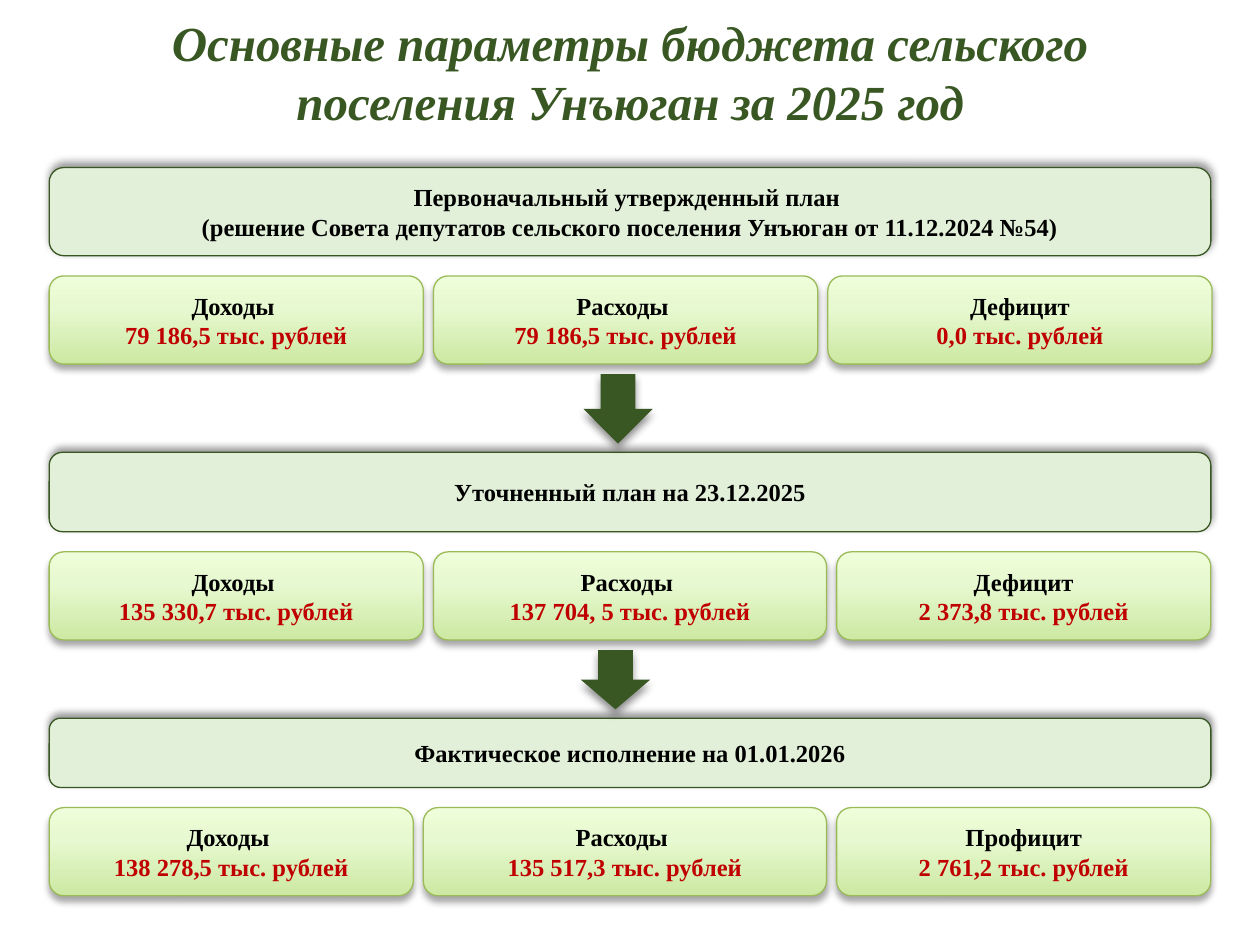
import lxml.etree
import pptx
import pptx.dml.color
import pptx.enum.shapes
import pptx.enum.text
import pptx.oxml.ns
import pptx.util

Inches = pptx.util.Inches
Pt = pptx.util.Pt
RGB = pptx.dml.color.RGBColor
Kind = pptx.enum.shapes.MSO_SHAPE
qn = pptx.oxml.ns.qn

GREEN = RGB(0x38, 0x57, 0x23)
PALE = RGB(0xE2, 0xF0, 0xD9)
EDGE = RGB(0x9B, 0xBB, 0x59)
RED = RGB(0xC0, 0x00, 0x00)
BLACK = RGB(0x00, 0x00, 0x00)
STOPS = (
    (0, RGB(0xCC, 0xE8, 0xA2)),
    (64, RGB(0xE7, 0xF9, 0xD0)),
    (100, RGB(0xEF, 0xFE, 0xDA)),
)

FONT = {"name": "Times New Roman", "size": Pt(14), "bold": True}
TITLE = {**FONT, "size": Pt(28), "italic": True}
FRAME = {"word_wrap": True, "vertical_anchor": pptx.enum.text.MSO_ANCHOR.MIDDLE}
GAP = 0.08
CARD = 0.7

PLANS = (
    (1.33, 1.56,
     ("Первоначальный утвержденный план ",
      "(решение Совета депутатов сельского поселения Унъюган от 11.12.2024 №54)"),
     (("Доходы ", "79 186,5 тыс. рублей", 2.97),
      ("Расходы ", "79 186,5 тыс. рублей", 3.05),
      ("Дефицит", "0,0 тыс. рублей", 3.05))),
    (3.59, 1.49,
     ("Уточненный план на 23.12.2025",),
     (("Доходы ", "135 330,7 тыс. рублей", 2.97),
      ("Расходы ", "137 704, 5 тыс. рублей", 3.12),
      ("Дефицит", "2 373,8 тыс. рублей", 2.97))),
    (5.7, 1.41,
     ("Фактическое исполнение на 01.01.2026",),
     (("Доходы ", "138 278,5 тыс. рублей", 2.89),
      ("Расходы ", "135 517,3 тыс. рублей", 3.2),
      ("Профицит", "2 761,2 тыс. рублей", 2.97))),
)
ARROWS = ((4.63, 2.97, 0.55, 0.55), (4.61, 5.16, 0.55, 0.47))


def set_all(item, values):
    """Set each attribute of the item from a dict."""
    for key, value in values.items():
        setattr(item, key, value)


def add_tint(node, tag, color, **attrs):
    """Add an element that holds one colour and return both."""
    item = lxml.etree.SubElement(node, qn(tag), attrs)
    tint = lxml.etree.SubElement(item, qn("a:srgbClr"), val=str(color))
    return item, tint


def add_shade(effects, alpha, blur, dist, angle):
    """Add an outer shadow to an effect list."""
    _, tint = add_tint(
        effects, "a:outerShdw", BLACK, blurRad=str(Pt(blur)), dist=str(Pt(dist)),
        dir=str(angle * 60000), algn="ctr", rotWithShape="0")
    lxml.etree.SubElement(tint, qn("a:alpha"), val=str(alpha * 1000))


def add_text(frame, lines, font):
    """Write centred lines, each with its colour, into a frame."""
    set_all(frame, FRAME)
    for index, (words, color) in enumerate(lines):
        para = frame.add_paragraph() if index else frame.paragraphs[0]
        para.alignment = pptx.enum.text.PP_ALIGN.CENTER
        run = para.add_run()
        run.text = words
        set_all(run.font, font)
        run.font.color.rgb = color


def add_form(slide, kind, box, shade):
    """Add a preset shape with a shadow."""
    form = slide.shapes.add_shape(kind, *map(Inches, box))
    form.shadow.inherit = False
    add_shade(form._element.spPr.find(qn("a:effectLst")), *shade)
    return form


def set_fill(form, color):
    """Give a shape a plain fill."""
    form.fill.solid()
    form.fill.fore_color.rgb = color


def set_line(form, color):
    """Give a shape a thin outline."""
    form.line.color.rgb = color
    form.line.width = Pt(0.75)


def add_title(slide, box):
    """Place and format the slide title."""
    title = slide.shapes.title
    names = ("left", "top", "width", "height")
    set_all(title, dict(zip(names, map(Inches, box))))
    words = "Основные параметры бюджета сельского поселения Унъюган за 2025 год"
    frame = title.text_frame
    add_text(frame, [(words, GREEN)], TITLE)
    frame.vertical_anchor = pptx.enum.text.MSO_ANCHOR.TOP
    fill = frame.paragraphs[0].runs[0]._r.rPr.find(qn("a:solidFill"))
    effects = lxml.etree.Element(qn("a:effectLst"))
    fill.addnext(effects)
    add_shade(effects, 43, 3, 3, 45)


def add_head(slide, box, lines):
    """Add the wide heading of a plan."""
    head = add_form(slide, Kind.ROUNDED_RECTANGLE, box, (40, 4, 3, 270))
    set_fill(head, PALE)
    set_line(head, GREEN)
    add_text(head.text_frame, [(line, BLACK) for line in lines], FONT)


def add_card(slide, box, name, value):
    """Add a gradient card with a name and a sum."""
    card = add_form(slide, Kind.ROUNDED_RECTANGLE, box, (35, 4, 3, 90))
    card.fill.gradient()
    card.fill.gradient_angle = 90
    stops = card._element.spPr.find(qn("a:gradFill")).find(qn("a:gsLst"))
    for stop in list(stops):
        stops.remove(stop)
    for place, color in STOPS:
        add_tint(stops, "a:gs", color, pos=str(place * 1000))
    set_line(card, EDGE)
    add_text(card.text_frame, [(name, BLACK), (value, RED)], FONT)


def add_plan(slide, box, lines, cards):
    """Add a heading with its row of cards at the foot of the box."""
    left, top, width, height = box
    add_head(slide, (left, top, width, height - CARD - 2 * GAP), lines)
    for name, value, wide in cards:
        add_card(slide, (left, top + height - CARD, wide, CARD), name, value)
        left += wide + GAP


def add_arrow(slide, box):
    """Add a down arrow between two plans."""
    arrow = add_form(slide, Kind.DOWN_ARROW, box, (45, 5, 3, 90))
    set_fill(arrow, GREEN)
    arrow.line.fill.background()


def main():
    """Build and save the slide."""
    deck = pptx.Presentation()
    set_all(deck, {"slide_width": Inches(10), "slide_height": Inches(7.5)})
    slide = deck.slides.add_slide(deck.slide_layouts[5])
    add_title(slide, (0.39, 0.05, 9.22, 1.04))
    for top, height, lines, cards in PLANS:
        add_plan(slide, (0.39, top, 9.22, height), lines, cards)
    for box in ARROWS:
        add_arrow(slide, box)
    deck.save("out.pptx")


if __name__ == "__main__":
    main()
